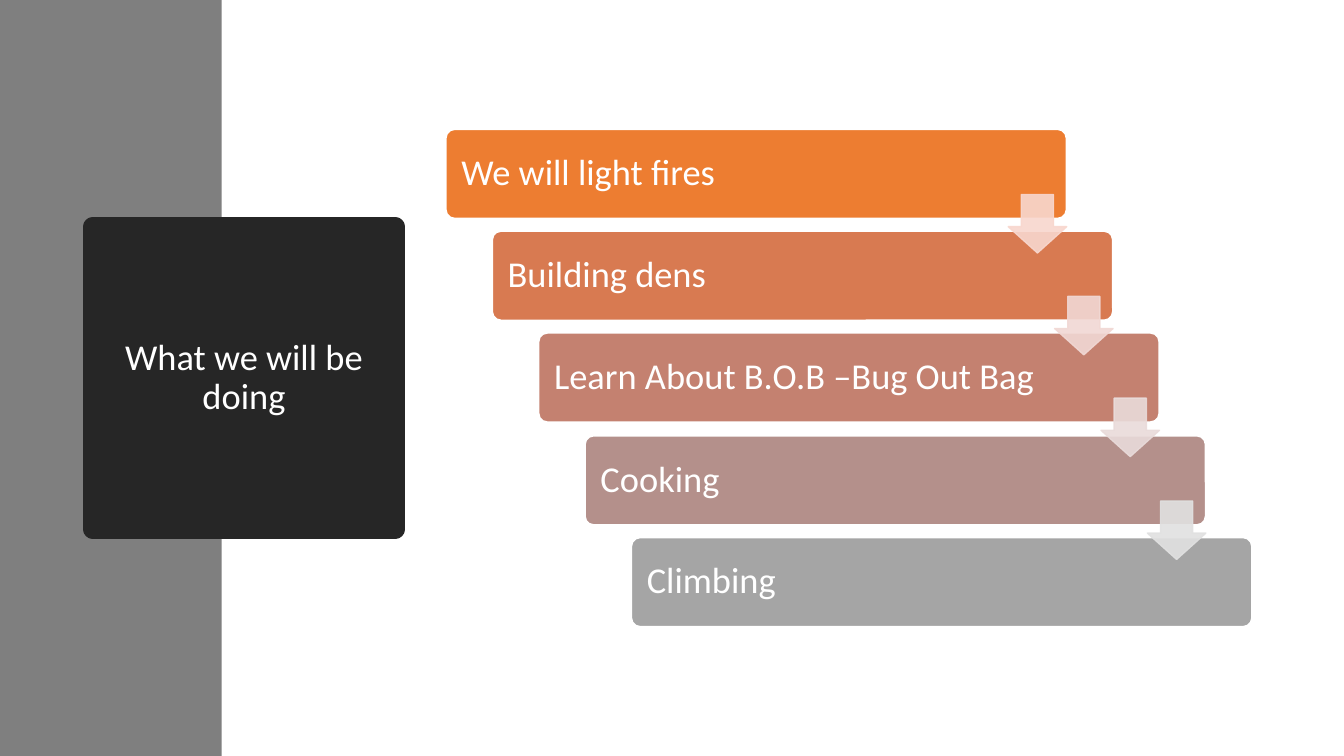
from dataclasses import dataclass

from lxml.etree import SubElement
from pptx import Presentation
from pptx.dml.color import RGBColor
from pptx.enum.shapes import MSO_SHAPE as SHAPE
from pptx.enum.text import MSO_ANCHOR as ANCHOR, MSO_AUTO_SIZE as AUTO, PP_ALIGN as ALIGN
from pptx.oxml.ns import qn
from pptx.util import Emu, Pt

EMU_PER_PX = 9144  # 100 px to the inch


def px(n):
    return Emu(n * EMU_PER_PX)


@dataclass(frozen=True)
class Theme:
    font: str = "Calibri"
    size: float = 26
    text: str = "FFFFFF"
    sidebar: str = "7F7F7F"
    title: str = "262626"
    title_line: float = 13.75
    bar_line: float = 1.5
    arrow_line: float = 1
    arrow_opacity: int = 90
    bars: tuple = ("ED7D31", "D87A51", "C48170", "B4908B", "A5A5A5")
    arrows: tuple = ("F8D7CE", "F1D8D4", "E9DBDA", "E1E1E1")


class SlideBuilder:
    def __init__(self, slide, theme):
        self.slide = slide
        self.theme = theme

    def paint(self, sp, fill, line=None, width=0, opacity=100):
        sp.fill.solid()
        sp.fill.fore_color.rgb = RGBColor.from_string(fill)
        if line is None:
            sp.line.fill.background()
        else:
            sp.line.color.rgb = RGBColor.from_string(line)
            sp.line.width = Pt(width)
        if opacity < 100:
            for clr in sp._element.spPr.iter(qn("a:srgbClr")):
                SubElement(clr, qn("a:alpha"), val=str(opacity * 1000))

    def label(self, sp, text, align):
        tf = sp.text_frame
        tf.text = text
        tf.word_wrap = True
        tf.auto_size = AUTO.NONE
        tf.vertical_anchor = ANCHOR.MIDDLE
        p = tf.paragraphs[0]
        p.alignment = align
        p.line_spacing = 0.9
        font = p.runs[0].font
        font.name = self.theme.font
        font.size = Pt(self.theme.size)
        font.color.rgb = RGBColor.from_string(self.theme.text)
        return tf

    def shape(self, kind, x, y, w, h, adjustments=()):
        sp = self.slide.shapes.add_shape(kind, px(x), px(y), px(w), px(h))
        sp.shadow.inherit = False
        for i, value in enumerate(adjustments):
            sp.adjustments[i] = value
        return sp

    def sidebar(self, w, h):
        self.paint(self.shape(SHAPE.RECTANGLE, 0, 0, w, h), self.theme.sidebar)

    def title(self, text, x, y, w, h):
        sp = self.slide.shapes.title
        sp.left, sp.top, sp.width, sp.height = px(x), px(y), px(w), px(h)
        self.paint(sp, self.theme.title, self.theme.title, self.theme.title_line)
        self.label(sp, text, ALIGN.CENTER)
        # Bring the title in front of the sidebar
        self.slide.shapes._spTree.append(sp._element)

    def bar(self, text, color, x, y, w, h):
        sp = self.shape(SHAPE.ROUNDED_RECTANGLE, x, y, w, h, [0.1])
        self.paint(sp, color, self.theme.text, self.theme.bar_line)
        tf = self.label(sp, text, ALIGN.LEFT)
        tf.margin_left, tf.margin_right = px(13), px(108)

    def arrow(self, color, x, y, size):
        sp = self.shape(SHAPE.DOWN_ARROW, x, y, size, size, [0.55, 0.45])
        self.paint(sp, color, color, self.theme.arrow_line, self.theme.arrow_opacity)


def main():
    prs = Presentation()
    prs.slide_width, prs.slide_height = px(1333), px(750)
    theme = Theme()
    builder = SlideBuilder(prs.slides.add_slide(prs.slide_layouts[5]), theme)

    # Sidebar and title
    builder.sidebar(220, 750)
    builder.title("What we will be doing", 92, 225, 300, 300)

    # Staircase of activities
    activities = ["We will light fires", "Building dens",
                  "Learn About B.O.B –Bug Out Bag", "Cooking", "Climbing"]
    steps = [(442 + 46 * i, 128 + round(101.25 * i)) for i in range(len(activities))]
    for text, color, (x, y) in zip(activities, theme.bars, steps):
        builder.bar(text, color, x, y, 616, 89)

    # Arrows from each step to the next
    for color, (x, y) in zip(theme.arrows, steps):
        builder.arrow(color, x + 558, y + 65, 58)

    prs.save("out.pptx")


if __name__ == "__main__":
    main()
